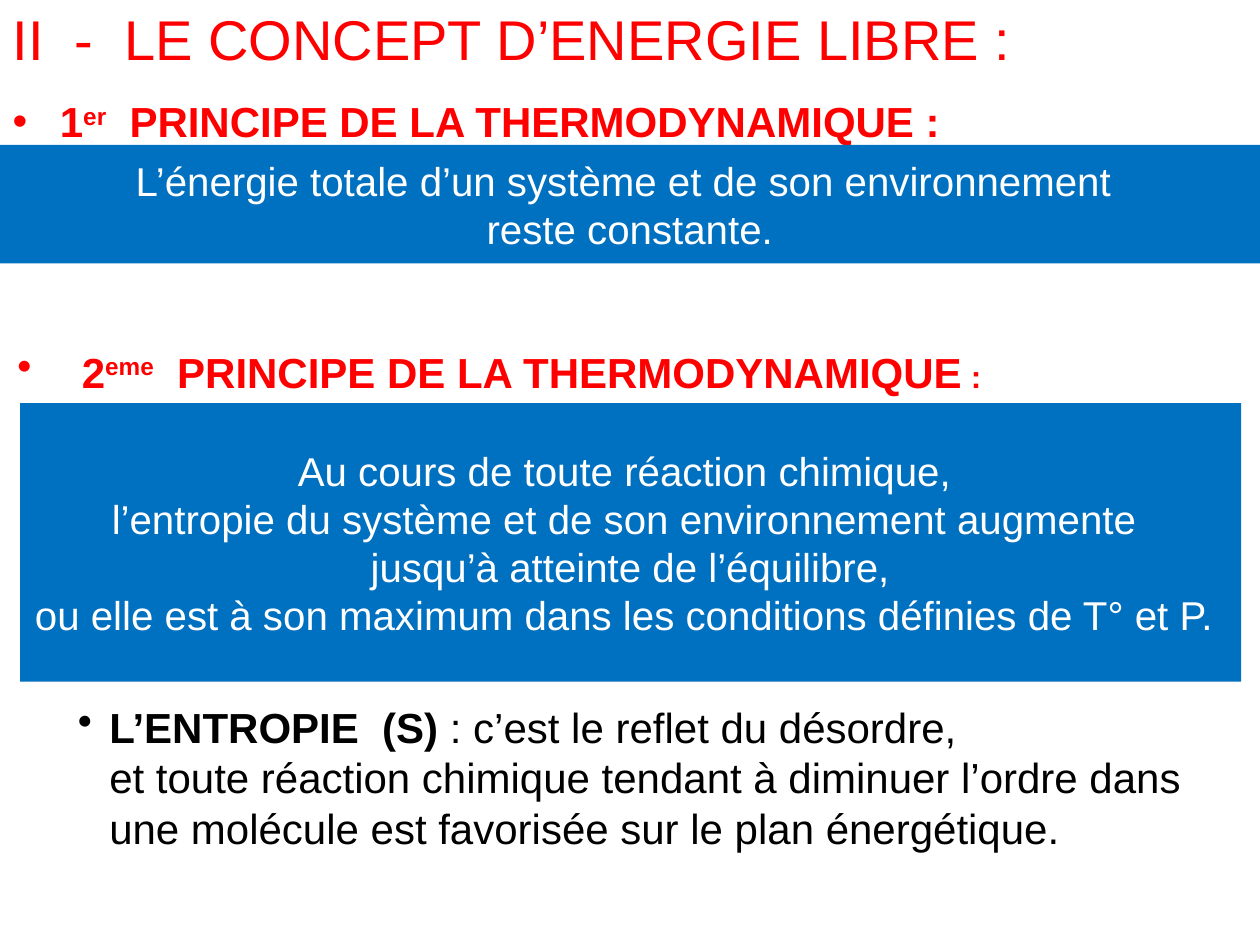
from dataclasses import dataclass

from lxml import etree
from pptx import Presentation
from pptx.dml.color import RGBColor
from pptx.enum.shapes import MSO_SHAPE
from pptx.enum.text import MSO_ANCHOR, MSO_AUTO_SIZE, PP_ALIGN
from pptx.oxml.ns import qn
from pptx.util import Pt

RECT = MSO_SHAPE.RECTANGLE
MIDDLE = MSO_ANCHOR.MIDDLE
LEFT, CENTER = PP_ALIGN.LEFT, PP_ALIGN.CENTER
FIXED, GROW = MSO_AUTO_SIZE.NONE, MSO_AUTO_SIZE.SHAPE_TO_FIT_TEXT


@dataclass(frozen=True)
class Theme:
    font: str = "Arial"
    red: RGBColor = RGBColor(255, 0, 0)
    blue: RGBColor = RGBColor(0, 112, 192)
    white: RGBColor = RGBColor(255, 255, 255)
    black: RGBColor = RGBColor(0, 0, 0)
    title: int = 32
    head: int = 24
    law: int = 23
    small: int = 18


THEME = Theme()


def place(shape, left, top, width, height):
    shape.left, shape.top = Pt(left), Pt(top)
    shape.width, shape.height = Pt(width), Pt(height)


def add_run(para, text, size, color, bold=False, raised=False):
    run = para.add_run()
    run.text = text
    font = run.font
    font.name, font.size, font.bold = THEME.font, Pt(size), bold
    font.color.rgb = color
    if raised:
        font._element.set("baseline", "30000")


def indent(para, margin, hang=0):
    """Set the left margin, with a bullet when there is a hanging indent."""
    props = para._p.get_or_add_pPr()
    props.set("marL", str(Pt(margin)))
    props.set("indent", str(-Pt(hang)))
    if hang:
        bullet = etree.SubElement(props, qn("a:buChar"))
        bullet.set("char", "•")


def add_title(slide, text):
    title = slide.shapes.title
    place(title, 0, 0, 720, 43.2)
    frame = title.text_frame
    frame.auto_size, frame.vertical_anchor = FIXED, MIDDLE
    para = frame.paragraphs[0]
    para.alignment = LEFT
    add_run(para, text, THEME.title, THEME.red)


def fill_head(para, number, suffix, end, end_size):
    """Write a numbered principle with a raised ordinal suffix."""
    para.space_before = Pt(0)
    size, red = THEME.head, THEME.red
    add_run(para, number, size, red, bold=True)
    add_run(para, suffix, size, red, bold=True, raised=True)
    add_run(para, "  PRINCIPE DE LA THERMODYNAMIQUE", size, red, bold=True)
    add_run(para, end, end_size, red, bold=True)


def add_law(slide, box, lines):
    """Draw a blue band with one centred paragraph for each line."""
    band = slide.shapes.add_shape(RECT, *map(Pt, box))
    band.shadow.inherit = False
    band.fill.solid()
    band.fill.fore_color.rgb = THEME.blue
    band.line.fill.background()
    frame = band.text_frame
    frame.word_wrap, frame.vertical_anchor = False, MIDDLE
    for i, line in enumerate(lines):
        para = frame.add_paragraph() if i else frame.paragraphs[0]
        para.alignment = CENTER
        add_run(para, line, THEME.law, THEME.white)


def add_box(slide, box, wrap):
    frame = slide.shapes.add_textbox(*map(Pt, box)).text_frame
    frame.word_wrap, frame.auto_size = wrap, GROW
    return frame


def add_note(slide):
    frame = add_box(slide, (19.4, 396.7, 686.2, 94.3), True)
    frame.vertical_anchor = MIDDLE
    size, black = THEME.head, THEME.black
    first = frame.paragraphs[0]
    indent(first, 36, 18)
    add_run(first, "L’ENTROPIE  (S)", size, black, bold=True)
    add_run(first, "\u00a0: c’est le reflet du désordre,", size, black)
    rest = frame.add_paragraph()
    indent(rest, 36)
    add_run(rest, "et toute réaction chimique tendant à diminuer l’ordre dans "
            "une molécule est favorisée sur le plan énergétique.", size, black)


def main():
    deck = Presentation()
    deck.slide_width, deck.slide_height = Pt(720), Pt(540)
    slide = deck.slides.add_slide(deck.slide_layouts[1])

    add_title(slide, "II  -  LE CONCEPT D’ENERGIE LIBRE\u00a0:")

    body = slide.placeholders[1]
    place(body, 0, 51.1, 720, 488.9)
    body.text_frame.auto_size = FIXED
    fill_head(body.text_frame.paragraphs[0], "1", "er", "\u00a0:", THEME.head)
    add_law(slide, (0, 82.8, 720, 67.7), [
        "L’énergie totale d’un système et de son environnement ",
        "reste constante.",
    ])

    second = add_box(slide, (2.9, 194.4, 578.2, 36), False).paragraphs[0]
    indent(second, 36.8, 36.8)
    fill_head(second, "2", "eme", "\u00a0:", THEME.small)
    add_law(slide, (11.5, 230.4, 697.7, 159.1), [
        "Au cours de toute réaction chimique, ",
        "l’entropie du système et de son environnement augmente ",
        "jusqu’à atteinte de l’équilibre,",
        "ou elle est à son maximum dans les conditions définies de T° et P. ",
    ])

    add_note(slide)
    deck.save("out.pptx")


if __name__ == "__main__":
    main()
